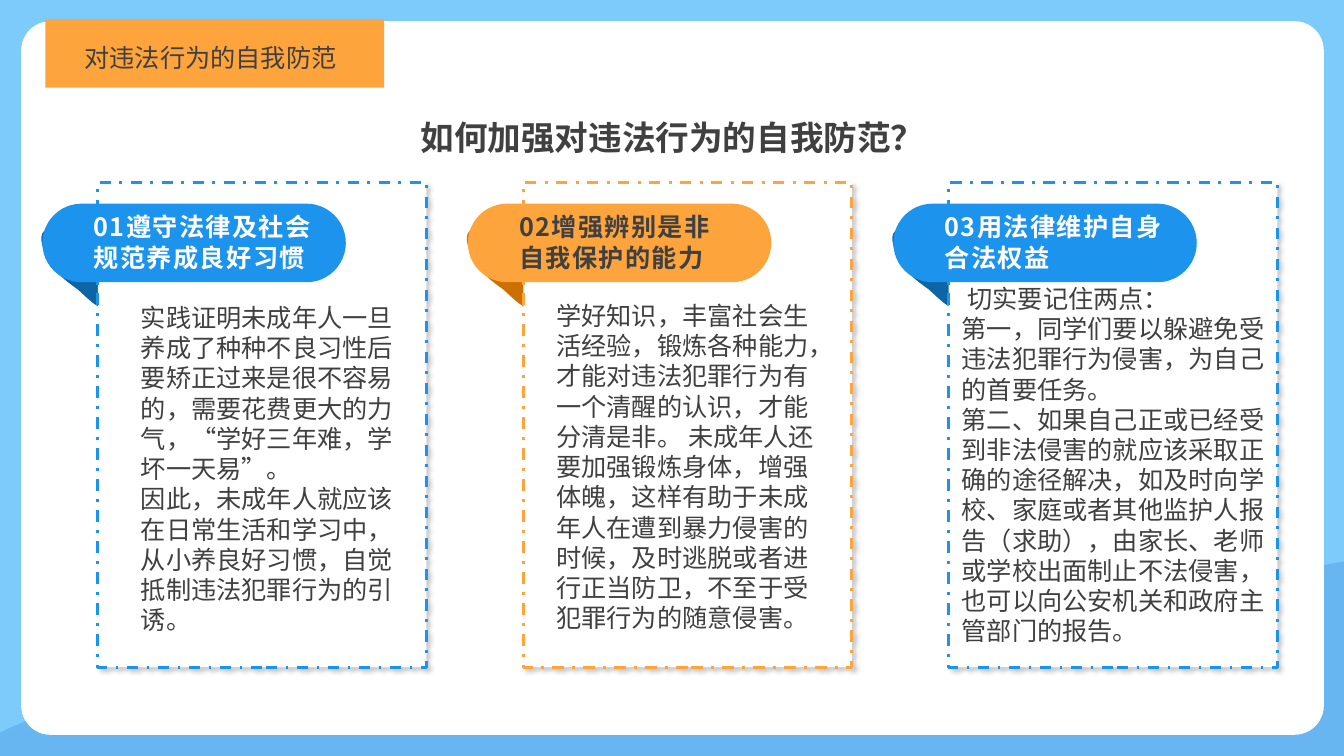
from lxml.etree import SubElement
from pptx import Presentation
from pptx.dml.color import RGBColor
from pptx.enum.dml import MSO_LINE
from pptx.enum.shapes import MSO_SHAPE
from pptx.enum.text import MSO_ANCHOR, MSO_AUTO_SIZE, PP_ALIGN
from pptx.oxml.ns import qn
from pptx.util import Inches, Pt

FONT = "Noto Sans CJK SC"
COLORS = {
    "sky": "7CCBFA",
    "wave": "67B6F2",
    "white": "FFFFFF",
    "ink": "404040",
    "blue": "1C93EC",
    "blue_fold": "0E65A6",
    "orange": "FEA43C",
    "orange_fold": "CB7001",
    "black": "000000",
}
WAVE_OUTLINE = [
    [(13.33, 0)],
    [(13.33, 1.93)],
    [(0, 1.93)],
    [(0, 1.7)],
    [(0.1, 1.65)],
    [(0.75, 1.37), (1.67, 1.08), (2.75, 1.01)],
    [(4.48, 0.89), (7.78, 1.52), (9.61, 1.43)],
    [(11.16, 1.35), (12.17, 0.29), (13.16, 0.03)],
]
FOLD_OUTLINE = [
    [(0.54, 0.02)],
    [(0.33, 0), (0.11, -0.02), (0.03, 0.04)],
    [(-0.04, 0.1), (0.03, 0.26), (0.08, 0.35)],
    [(0.13, 0.45), (0.26, 0.55), (0.36, 0.62)],
    [(0.45, 0.7), (0.61, 0.87), (0.66, 0.79)],
    [(0.7, 0.71), (0.61, 0.12), (0.61, 0.12)],
    [(0.6, 0), (0.59, 0.03), (0.59, 0.06)],
]
ADVICE = [
    {
        "color": "blue", "fold": "blue_fold", "heading_color": "white",
        "heading": ["01遵守法律及社会规范养成良好习惯"],
        "body": [
            "实践证明未成年人一旦养成了种种不良习性后要矫正过来是很不容易的，需要花费更大的力气，“学好三年难，学坏一天易”。",
            "因此，未成年人就应该在日常生活和学习中，从小养良好习惯，自觉抵制违法犯罪行为的引诱。",
        ],
        "body_box": (0.33, 1.14, 2.84, 3.43),
    },
    {
        "color": "orange", "fold": "orange_fold", "heading_color": "ink",
        "heading": ["02增强辨别是非", "自我保护的能力"],
        "body": [
            "学好知识，丰富社会生活经验，锻炼各种能力，才能对违法犯罪行为有一个清醒的认识，才能分清是非。 未成年人还要加强锻炼身体，增强体魄，这样有助于未成年人在遭到暴力侵害的时候，及时逃脱或者进行正当防卫，不至于受犯罪行为的随意侵害。",
        ],
        "body_box": (0.23, 1.12, 2.84, 3.43),
    },
    {
        "color": "blue", "fold": "blue_fold", "heading_color": "white",
        "heading": ["03用法律维护自身合法权益"],
        "body": [
            " 切实要记住两点：",
            "第一，同学们要以躲避免受违法犯罪行为侵害，为自己的首要任务。",
            "第二、如果自己正或已经受到非法侵害的就应该采取正确的途径解决，如及时向学校、家庭或者其他监护人报告（求助），由家长、老师或学校出面制止不法侵害，也可以向公安机关和政府主管部门的报告。",
        ],
        "body_box": (0.03, 0.95, 3.28, 3.74),
    },
]


def rgb(name):
    return RGBColor.from_string(COLORS[name])


def paint(shape, fill):
    shape.shadow.inherit = False
    shape.fill.solid()
    shape.fill.fore_color.rgb = rgb(fill)
    shape.line.fill.background()
    return shape


def add_block(slide, box, fill, preset=MSO_SHAPE.RECTANGLE, rounding=None):
    block = slide.shapes.add_shape(preset, *map(Inches, box))
    if rounding is not None:
        block.adjustments[0] = rounding
    return paint(block, fill)


def add_outline(slide, box, segments, fill):
    left, top, width, height = map(Inches, box)
    builder = slide.shapes.build_freeform(left, top)
    builder.add_line_segments([(left + width, top), (left + width, top + height)])
    outline = builder.convert_to_shape()
    route = next(outline._element.iter(qn("a:path")))
    for corner in list(route):
        route.remove(corner)
    for index, points in enumerate(segments):
        command = "a:cubicBezTo" if len(points) == 3 else "a:lnTo" if index else "a:moveTo"
        step = SubElement(route, qn(command))
        for x, y in points:
            SubElement(step, qn("a:pt"), x=str(Inches(x)), y=str(Inches(y)))
    SubElement(route, qn("a:close"))
    return paint(outline, fill)


def write_text(holder, paragraphs, size=18, color="ink", bold=False,
               align=PP_ALIGN.LEFT, line_spacing=None, tracking=0):
    frame = holder.text_frame
    frame.word_wrap = True
    frame.auto_size = MSO_AUTO_SIZE.SHAPE_TO_FIT_TEXT
    frame.vertical_anchor = MSO_ANCHOR.TOP
    for index, text in enumerate(paragraphs):
        paragraph = frame.add_paragraph() if index else frame.paragraphs[0]
        paragraph.alignment = align
        paragraph.space_before = Pt(0)
        if line_spacing:
            paragraph.line_spacing = line_spacing
        run = paragraph.add_run()
        run.text = text
        run.font.size = Pt(size)
        run.font.bold = bold
        run.font.color.rgb = rgb(color)
        run.font.name = FONT
        properties = run.font._element
        SubElement(properties, qn("a:ea"), typeface=FONT)
        if tracking:
            properties.set("spc", str(tracking * 100))


def add_text(slide, box, paragraphs, **style):
    write_text(slide.shapes.add_textbox(*map(Inches, box)), paragraphs, **style)


def add_soft_shadow(shape):
    effects = shape._element.spPr.find(qn("a:effectLst"))
    shadow = SubElement(effects, qn("a:outerShdw"), blurRad=str(Pt(3)),
                        dist=str(Pt(3)), dir="2700000", algn="tl", rotWithShape="0")
    tint = SubElement(shadow, qn("a:srgbClr"), val=COLORS["black"])
    SubElement(tint, qn("a:alpha"), val="20000")


def draw_backdrop(slide, width, height):
    add_block(slide, (0, 0, width, height), "sky")
    add_outline(slide, (0, height - 1.93, width, 1.93), WAVE_OUTLINE, "wave")
    add_block(slide, (0.21, 0.21, 12.92, 7.08), "white", MSO_SHAPE.ROUNDED_RECTANGLE, 0.041)


def draw_section_tag(slide, left, top):
    add_block(slide, (left, top, 3.36, 0.68), "orange")
    add_text(slide, (left + 0.29, top + 0.18, 2.83, 0.4),
             ["对违法行为的自我防范"], align=PP_ALIGN.JUSTIFY)


def place_title(slide, left, top, width, height):
    title = slide.shapes.title
    title.left, title.top, title.width, title.height = map(Inches, (left, top, width, height))
    write_text(title, ["如何加强对违法行为的自我防范？"], size=24, bold=True,
               align=PP_ALIGN.CENTER, line_spacing=1.5)
    slide.shapes._spTree.append(title._element)


def draw_advice(slide, left, top, width, height, advice):
    add_outline(slide, (left - 0.56, top + 0.44, 0.67, 0.81), FOLD_OUTLINE, advice["fold"])
    card = add_block(slide, (left, top, width, height), "white")
    card.line.color.rgb = rgb(advice["color"])
    card.line.width = Pt(2)
    card.line.dash_style = MSO_LINE.DASH_DOT
    add_soft_shadow(card)
    add_block(slide, (left - 0.55, top + 0.21, 3.01, 0.78), advice["color"],
              MSO_SHAPE.ROUNDED_RECTANGLE, 0.5)
    add_text(slide, (left - 0.14, top + 0.24, 2.51, 0.71), advice["heading"],
             color=advice["heading_color"], bold=True, tracking=1)
    dx, dy, body_width, body_height = advice["body_box"]
    add_text(slide, (left + dx, top + dy, body_width, body_height), advice["body"])


def main():
    deck = Presentation()
    deck.slide_width, deck.slide_height = Inches(13.33), Inches(7.5)
    slide = deck.slides.add_slide(deck.slide_layouts[5])
    draw_backdrop(slide, 13.33, 7.5)
    draw_section_tag(slide, 0.45, 0.19)
    place_title(slide, 1.57, 0.91, 10.2, 0.64)
    for column, advice in enumerate(ADVICE):
        draw_advice(slide, 0.97 + column * 4.22, 1.81, 3.26, 4.81, advice)
    deck.save("out.pptx")


if __name__ == "__main__":
    main()
